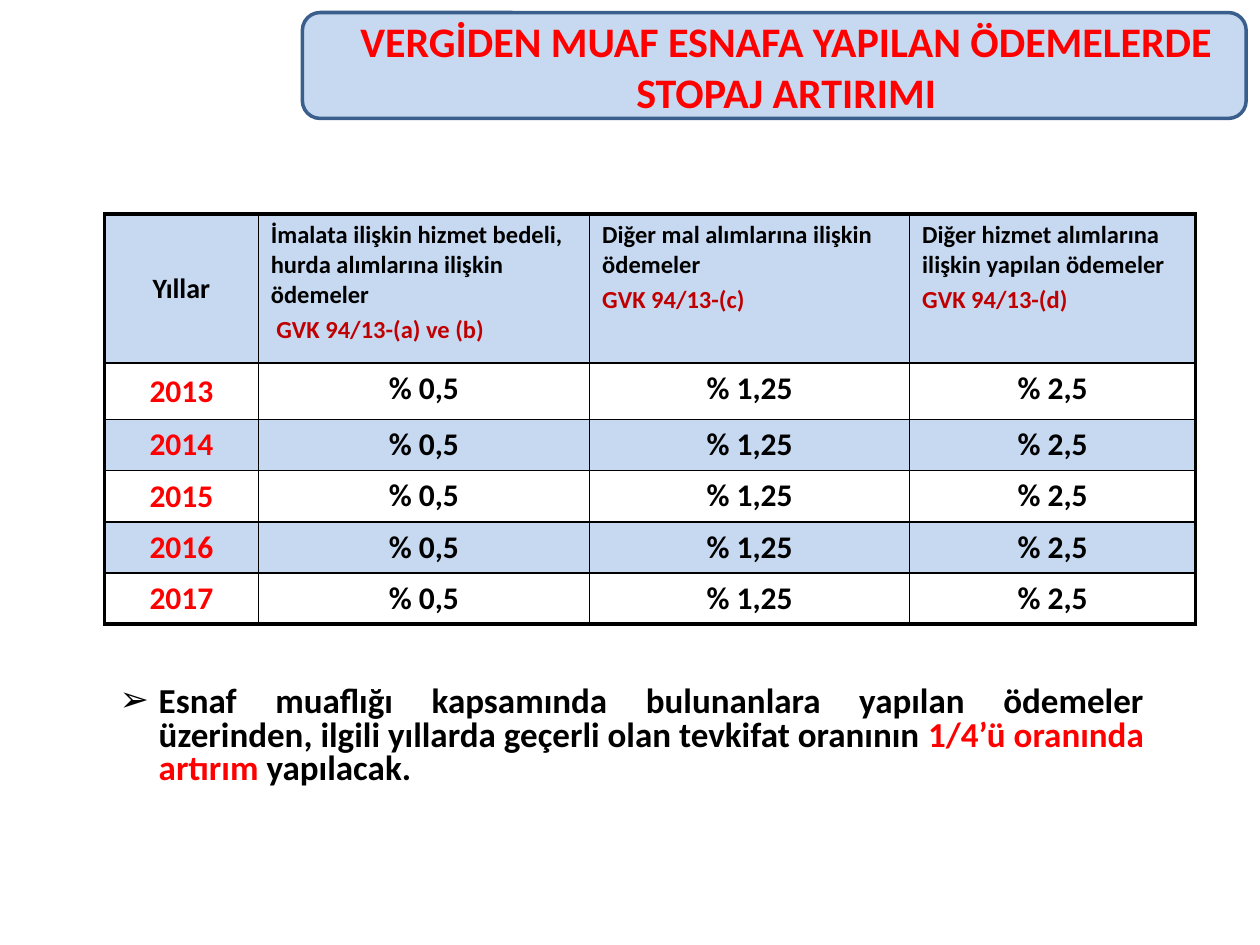
from typing import NamedTuple

from lxml import etree
from pptx import Presentation
from pptx.dml.color import RGBColor
from pptx.enum.shapes import MSO_SHAPE
from pptx.enum.text import MSO_ANCHOR, MSO_AUTO_SIZE, PP_ALIGN
from pptx.oxml.ns import qn
from pptx.util import Inches, Pt

ROUNDED = MSO_SHAPE.ROUNDED_RECTANGLE
TOP, MIDDLE = MSO_ANCHOR.TOP, MSO_ANCHOR.MIDDLE
LEFT, CENTER, JUSTIFY = PP_ALIGN.LEFT, PP_ALIGN.CENTER, PP_ALIGN.JUSTIFY
NO_AUTOFIT = MSO_AUTO_SIZE.NONE

FONT = "Calibri"
COLORS = {
    "black": "000000",
    "red": "FF0000",
    "dark_red": "C00000",
    "pale_blue": "C6D9F1",
    "outline": "3A5F8C",
}
INNER_BORDER, OUTER_BORDER = 1, 2.25


class Run(NamedTuple):
    text: str
    color: str = "black"


class CellText(NamedTuple):
    lines: list[Run]
    size: float
    align: PP_ALIGN = CENTER
    anchor: MSO_ANCHOR = TOP


def rgb(name: str) -> RGBColor:
    return RGBColor.from_string(COLORS[name])


def add_run(p, run: Run, size: float) -> None:
    r = p.add_run()
    r.text = run.text
    r.font.name, r.font.size, r.font.bold = FONT, Pt(size), True
    r.font.color.rgb = rgb(run.color)


def place(s, left: float, top: float, width: float, height: float) -> None:
    s.left, s.top = Inches(left), Inches(top)
    s.width, s.height = Inches(width), Inches(height)


def set_border(cell, side: str, width: float) -> None:
    ln = etree.Element(qn(f"a:{side}"), w=str(Pt(width)))
    fill = etree.SubElement(ln, qn("a:solidFill"))
    etree.SubElement(fill, qn("a:srgbClr"), val=COLORS["black"])
    cell._tc.get_or_add_tcPr().append(ln)


def fill_cell(cell, content: CellText, shaded: bool, edges: dict[str, bool]) -> None:
    for side, outer in edges.items():
        set_border(cell, side, OUTER_BORDER if outer else INNER_BORDER)
    if shaded:
        cell.fill.solid()
        cell.fill.fore_color.rgb = rgb("pale_blue")
    else:
        cell.fill.background()
    cell.vertical_anchor = content.anchor
    tf = cell.text_frame
    for i, line in enumerate(content.lines):
        p = tf.add_paragraph() if i else tf.paragraphs[0]
        p.alignment = content.align
        if i:
            p.space_before = Pt(0.2 * content.size)
        add_run(p, line, content.size)


def heading(text: str, law: str) -> CellText:
    return CellText([Run(text), Run(law, "dark_red")], 14, LEFT)


prs = Presentation()
prs.slide_width, prs.slide_height = Inches(10), Inches(7.5)
slide = prs.slides.add_slide(prs.slide_layouts[0])
title, body = slide.placeholders

# Title on its rounded panel
panel = slide.shapes.add_shape(
    ROUNDED, Inches(2.4), Inches(0.1), Inches(7.49), Inches(0.84))
panel.shadow.inherit = False
panel.fill.solid()
panel.fill.fore_color.rgb = rgb("pale_blue")
panel.line.color.rgb = rgb("outline")
panel.line.width = Pt(2)
title.element.addprevious(panel.element)

place(title, 2.48, 0.21, 7.52, 0.63)
tf = title.text_frame
tf.auto_size, tf.vertical_anchor = NO_AUTOFIT, MIDDLE
p = tf.paragraphs[0]
p.alignment = CENTER
add_run(p, Run("VERGİDEN MUAF ESNAFA YAPILAN ÖDEMELERDE STOPAJ ARTIRIMI", "red"), 24)

# Bulleted note
place(body, 0.75, 5.4, 8.43, 0.87)
tf = body.text_frame
tf.auto_size, tf.vertical_anchor = NO_AUTOFIT, TOP
p = tf.paragraphs[0]
pPr = p._p.get_or_add_pPr()
pPr.set("marL", str(Inches(0.41)))
pPr.set("indent", str(Inches(-0.31)))
etree.SubElement(pPr, qn("a:buChar"), char="➢")
p.alignment, p.line_spacing, p.space_before = JUSTIFY, 0.8, Pt(0)
for run in (
    Run("Esnaf muaflığı kapsamında bulunanlara yapılan ödemeler üzerinden, "
        "ilgili yıllarda geçerli olan tevkifat oranının "),
    Run("1/4’ü oranında artırım", "red"),
    Run(" yapılacak."),
):
    add_run(p, run, 20)

# Table of rates by year
RATES = ["% 0,5", "% 1,25", "% 2,5"]
COL_WIDTHS = [1.22, 2.63, 2.54, 2.27]
ROW_HEIGHTS = [1.18, 0.45, 0.39, 0.39, 0.38, 0.38]
rows = [[
    CellText([Run("Yıllar")], 16, anchor=MIDDLE),
    heading("İmalata ilişkin hizmet bedeli, hurda alımlarına ilişkin ödemeler",
            " GVK 94/13-(a) ve (b)"),
    heading("Diğer mal alımlarına ilişkin ödemeler", "GVK 94/13-(c)"),
    heading("Diğer hizmet alımlarına ilişkin yapılan ödemeler", "GVK 94/13-(d)"),
]]
for year in range(2013, 2018):
    rows.append([CellText([Run(str(year), "red")], 18, anchor=MIDDLE)]
                + [CellText([Run(rate)], 18) for rate in RATES])

last_row, last_col = len(rows) - 1, len(COL_WIDTHS) - 1
table = slide.shapes.add_table(
    len(rows), len(COL_WIDTHS), Inches(0.83), Inches(1.7),
    Inches(sum(COL_WIDTHS)), Inches(sum(ROW_HEIGHTS))).table
table.first_row = table.horz_banding = False
for col, width in zip(table.columns, COL_WIDTHS):
    col.width = Inches(width)
for row, height in zip(table.rows, ROW_HEIGHTS):
    row.height = Inches(height)
for i, contents in enumerate(rows):
    for j, content in enumerate(contents):
        edges = {"lnL": j == 0, "lnR": j == last_col,
                 "lnT": i == 0, "lnB": i == last_row}
        fill_cell(table.cell(i, j), content, i % 2 == 0, edges)

prs.save("out.pptx")
